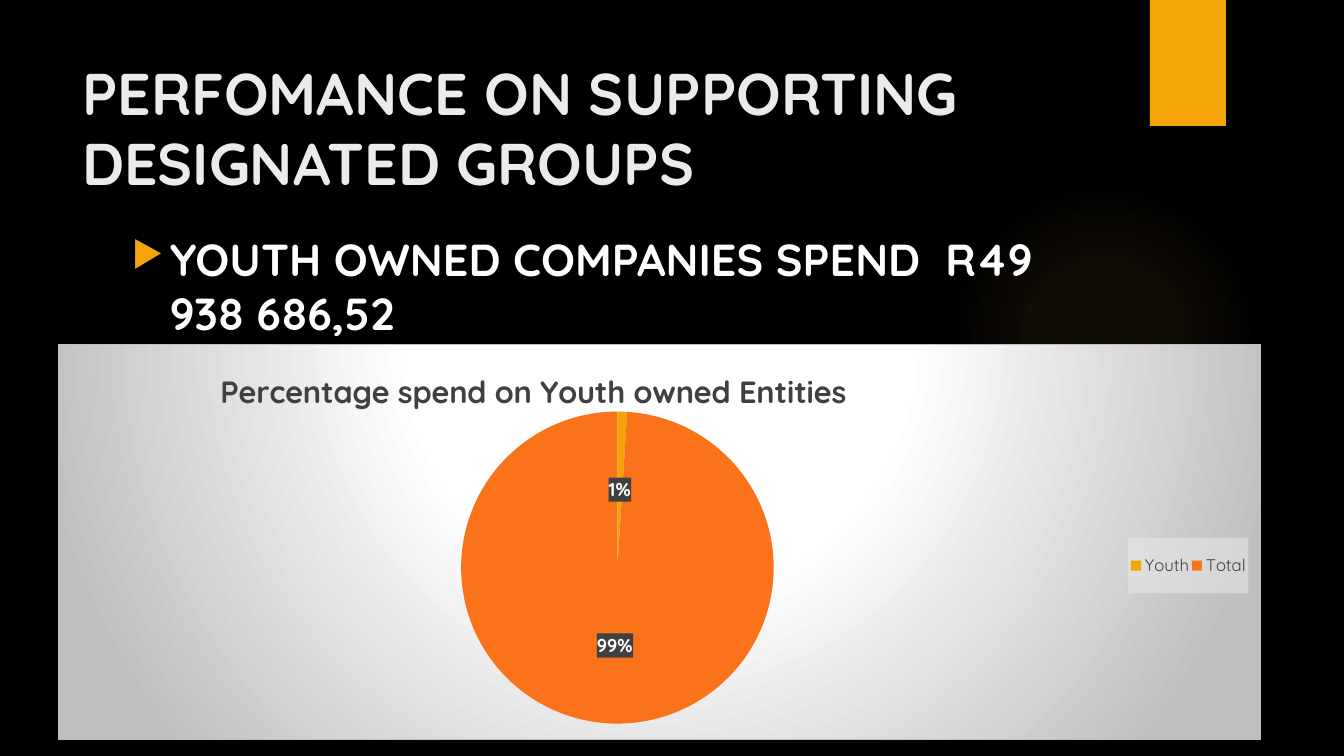
import pptx
import pptx.chart.data
import pptx.dml.color
import pptx.enum.chart
import pptx.enum.shapes
import pptx.enum.text
import pptx.oxml
import pptx.oxml.ns
import pptx.util

RGB = pptx.dml.color.RGBColor
BLACK = RGB(0x00, 0x00, 0x00)
WHITE = RGB(0xFF, 0xFF, 0xFF)
PALE = RGB(0xEB, 0xEB, 0xEB)
SILVER = RGB(0xBF, 0xBF, 0xBF)
CHARCOAL = RGB(0x40, 0x40, 0x40)
AMBER = RGB(0xF5, 0xA4, 0x08)
ORANGE = RGB(0xFA, 0x73, 0x1A)
GLOW = RGB(0xFA, 0xC9, 0x6A)

FONT = "Quicksand"
PX = 914400 / 100.8
qn = pptx.oxml.ns.qn


def px(*lengths):
    return [pptx.util.Emu(round(n * PX)) for n in lengths]


def xml(text):
    return pptx.oxml.parse_xml(text.replace(
        ">", " " + pptx.oxml.ns.nsdecls("a", "c") + ">", 1))


def set_font(font, size, color, bold=False):
    font.name, font.size, font.bold = FONT, pptx.util.Pt(size), bold
    font.color.rgb = color


def set_text(tf, text, *, size, color, bold=True):
    p = tf.paragraphs[0]
    r = p.add_run()
    r.text = text
    set_font(r.font, size, color, bold)
    return p


def color_xml(color, opacity=100):
    return f'<a:srgbClr val="{color}"><a:alpha val="{opacity * 1000}"/></a:srgbClr>'


def radial_fill(stops, top=50, bottom=50):
    """Circular gradient from (percent, colour, opacity) stops."""
    marks = "".join(f'<a:gs pos="{at * 1000}">{color_xml(color, opacity)}</a:gs>'
                    for at, color, opacity in stops)
    return (f'<a:gradFill rotWithShape="1"><a:gsLst>{marks}</a:gsLst><a:path path="circle">'
            f'<a:fillToRect l="50000" t="{top * 1000}" r="50000" b="{bottom * 1000}"/>'
            '</a:path></a:gradFill>')


def solid_fill(color, opacity):
    return f'<a:solidFill>{color_xml(color, opacity)}</a:solidFill>'


def fill_chart_part(element, fill, line="<a:ln><a:noFill/></a:ln>"):
    """Give a chart part that already has a font its fill and border."""
    element.find(qn("c:txPr")).addprevious(xml(f"<c:spPr>{fill}{line}</c:spPr>"))


def set_layout(element, index, x, y, w=None, h=None, inner=False):
    """Place a chart part by fractions of the chart's size."""
    for old in element.findall(qn("c:layout")):
        element.remove(old)
    target = '<c:layoutTarget val="inner"/>' if inner else ""
    modes = '<c:xMode val="edge"/><c:yMode val="edge"/>'
    sizes = "".join(f'<c:{name} val="{value}"/>'
                    for name, value in zip("xywh", (x, y, w, h)) if value is not None)
    element.insert(index, xml(
        f"<c:layout><c:manualLayout>{target}{modes}{sizes}</c:manualLayout></c:layout>"))


def add_decoration(s):
    shapes = pptx.enum.shapes.MSO_SHAPE
    glow = s.shapes.add_shape(shapes.OVAL, *px(949, 184, 310, 310))
    tab = s.shapes.add_shape(shapes.RECTANGLE, *px(1150, 0, 76, 126))
    for sp in (glow, tab):
        sp.shadow.inherit = False
        sp.line.fill.background()
    tab.fill.solid()
    tab.fill.fore_color.rgb = AMBER
    glow.element.spPr.find(qn("a:prstGeom")).addnext(
        xml(radial_fill([(0, GLOW, 7), (36, GLOW, 6), (69, GLOW, 0)])))


def add_title(s, x, y, w, h):
    title = s.shapes.title
    title.left, title.top, title.width, title.height = px(x, y, w, h)
    tf = title.text_frame
    tf.word_wrap = True
    tf.auto_size = pptx.enum.text.MSO_AUTO_SIZE.NONE
    tf.vertical_anchor = pptx.enum.text.MSO_ANCHOR.MIDDLE
    p = set_text(tf, "PERFOMANCE ON SUPPORTING DESIGNATED GROUPS", size=42, color=PALE)
    p.alignment = pptx.enum.text.PP_ALIGN.LEFT
    p.line_spacing = 1.0


def add_bullet(s, x, y, w, h):
    tf = s.shapes.add_textbox(*px(x, y, w, h)).text_frame
    tf.word_wrap = True
    p = tf.paragraphs[0]
    pPr = p._p.get_or_add_pPr()
    indent = px(38)[0]
    pPr.set("marL", str(indent))
    pPr.set("indent", str(-indent))
    for tag in (f"<a:buClr>{color_xml(AMBER)}</a:buClr>", '<a:buSzPct val="80000"/>',
                '<a:buChar char="▶"/>'):
        pPr.append(xml(tag.replace("/>", "></a:" + tag[3:].split()[0] + ">")
                       if tag.endswith("/>") else tag))
    set_text(tf, "YOUTH OWNED COMPANIES SPEND  R49 938 686,52", size=32, color=WHITE)


def add_spend_chart(s, x, y, w, h):
    data = pptx.chart.data.CategoryChartData()
    data.categories = ["Youth", "Total"]
    data.add_series("Series 1", [1, 99])
    chart = s.shapes.add_chart(pptx.enum.chart.XL_CHART_TYPE.PIE,
                               *px(x, y, w, h), data).chart
    set_font(chart.font, 10, WHITE)
    fill_chart_part(
        chart.element,
        radial_fill([(0, WHITE, 100), (39, WHITE, 100), (100, SILVER, 100)], -80, 180),
        f'<a:ln w="9525">{solid_fill(SILVER, 100)}</a:ln>')

    chart.has_title = True
    set_text(chart.chart_title.text_frame, "Percentage spend on Youth owned Entities",
             size=22, color=CHARCOAL)
    set_layout(chart.chart_title._element, 1, 0.13, 0.05)

    chart.has_legend = True
    legend = chart.legend
    legend.position = pptx.enum.chart.XL_LEGEND_POSITION.RIGHT
    legend.include_in_layout = False
    set_font(legend.font, 12, CHARCOAL)
    set_layout(legend._element, 1, 0.89, 0.49, 0.1, 0.14)
    fill_chart_part(legend._element, solid_fill(PALE, 50))

    plot = chart.plots[0]
    plot.vary_by_categories = True
    set_layout(plot._element.getparent(), 0, 0.01, 0.17, 0.91, 0.79, inner=True)
    for i, color in enumerate((AMBER, ORANGE)):
        fill = plot.series[0].points[i].format.fill
        fill.solid()
        fill.fore_color.rgb = color

    plot.has_data_labels = True
    labels = plot.data_labels
    labels.show_percentage, labels.show_value = True, False
    labels.number_format, labels.number_format_is_linked = "0%", False
    labels.position = pptx.enum.chart.XL_LABEL_POSITION.CENTER
    set_font(labels.font, 13.3, WHITE, bold=True)
    fill_chart_part(labels._element, solid_fill(CHARCOAL, 90))


def main():
    prs = pptx.Presentation()
    prs.slide_width, prs.slide_height = px(1344, 756)
    s = prs.slides.add_slide(prs.slide_layouts[5])
    s.background.fill.solid()
    s.background.fill.fore_color.rgb = BLACK
    add_decoration(s)
    add_title(s, 72, 50, 994, 154)
    add_bullet(s, 122, 227, 986, 463)
    add_spend_chart(s, 58, 344, 1203, 396)
    prs.save("out.pptx")


if __name__ == "__main__":
    main()
